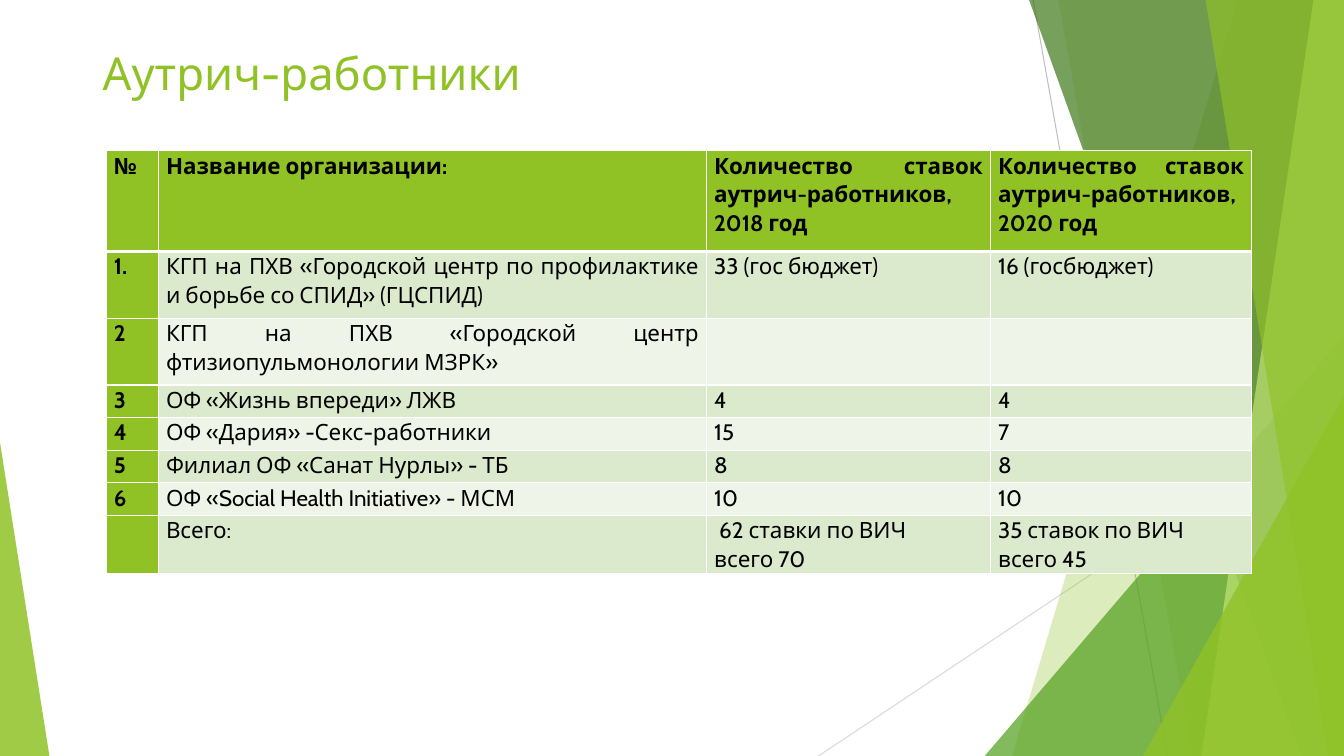
from lxml import etree
from pptx import Presentation
from pptx.dml.color import RGBColor
from pptx.enum.shapes import MSO_CONNECTOR as Connector, MSO_SHAPE as Shape
from pptx.enum.text import MSO_ANCHOR as Anchor, PP_ALIGN as Align
from pptx.oxml import parse_xml
from pptx.oxml.ns import nsdecls, qn
from pptx.util import Pt

COLOURS = {
    "white": "FFFFFF", "black": "000000", "grey": "BFBFBF", "pale grey": "D9D9D9",
    "green": "90C226", "mid green": "54A021", "dark green": "3F7819",
    "lime": "C0E474", "odd row": "DBE9CD", "even row": "EEF4E8",
}
WIDTH, HEIGHT = 960, 540


def paint(fill, colour, opacity=100):
    fill.solid()
    fill.fore_color.rgb = RGBColor.from_string(COLOURS[colour])
    if opacity < 100:
        tint = fill._xPr.find(qn("a:solidFill"))[0]
        etree.SubElement(tint, qn("a:alpha"), val=str(opacity * 1000))


def write(para, text, size, colour, bold=False):
    span = para.add_run()
    span.text = text
    formats = {"name": "Cabin", "size": Pt(size), "bold": bold}
    for key, value in formats.items():
        setattr(span.font, key, value)
    span.font.color.rgb = RGBColor.from_string(COLOURS[colour])


deck = Presentation()
deck.slide_width, deck.slide_height = Pt(WIDTH), Pt(HEIGHT)
page = deck.slides.add_slide(deck.slide_layouts[6])

rays = [
    (738, 0, 834, 540, "grey"),
    (960, 290, 584.6, 540, "pale grey"),
]
for *ends, colour in rays:
    ray = page.shapes.add_connector(Connector.STRAIGHT, *[Pt(end) for end in ends])
    ray.line.width = Pt(0.75)
    ray.line.color.rgb = RGBColor.from_string(COLOURS[colour])
    etree.SubElement(ray._element.spPr, qn("a:effectLst"))

facets = [
    ("band", (884.2, 722.9), "green", 30),
    ("band", (756, 851.8), "green", 20),
    ("triangle", (703.4, 239.8, 256.6, 300.2, 1), "mid green", 72),
    ("band", (735.1, 929.5), "dark green", 70),
    ("band", (938.2, 858.2), "lime", 70),
    ("band", (861.1, 949), "green", 65),
    ("triangle", (816.5, 283, 143.5, 257, 1), "green", 80),
    ("triangle", (0, 316.1, 35.3, 223.9, 0), "green", 85),
]
for kind, numbers, colour, opacity in facets:
    if kind == "band":
        top_x, bottom_x = numbers
        outline = page.shapes.build_freeform(Pt(top_x), 0)
        corners = [(WIDTH, 0), (WIDTH, HEIGHT), (bottom_x, HEIGHT)]
        outline.add_line_segments([(Pt(x), Pt(y)) for x, y in corners])
        facet = outline.convert_to_shape()
    else:
        *frame, apex = numbers
        facet = page.shapes.add_shape(Shape.ISOSCELES_TRIANGLE, *[Pt(n) for n in frame])
        facet.adjustments[0] = apex
    facet.shadow.inherit = False
    facet.line.fill.background()
    paint(facet.fill, colour, opacity)

title = page.shapes.add_textbox(Pt(66.2), Pt(28.8), Pt(828), Pt(44)).text_frame
title.word_wrap = True
title.vertical_anchor = Anchor.TOP
write(title.paragraphs[0], "Аутрич-работники", 32.4, "green")

rows = [
    ("№", "Название организации:", "Количество ставок аутрич-работников, 2018 год",
     "Количество ставок аутрич-работников, 2020 год"),
    ("1.", "КГП на ПХВ «Городской центр по профилактике и борьбе со СПИД» (ГЦСПИД)",
     "33 (гос бюджет)", "16 (госбюджет)"),
    ("2", "КГП на ПХВ «Городской центр фтизиопульмонологии МЗРК»", "", ""),
    ("3", "ОФ «Жизнь впереди» ЛЖВ", "4", "4"),
    ("4", "ОФ «Дария» -Секс-работники", "15", "7"),
    ("5", "Филиал ОФ «Санат Нурлы» - ТБ", "8", "8"),
    ("6", "ОФ «Social Health Initiative» - МСМ", "10", "10"),
    ("", "Всего:", " 62 ставки по ВИЧ\nвсего 70", "35 ставок по ВИЧ\nвсего 45"),
]
column_widths = [37.2, 391.6, 202.8, 186.6]
row_heights = [72, 47.7, 47.7] + [23.3] * 4 + [41.4]
table = page.shapes.add_table(
    len(rows), len(column_widths), Pt(76), Pt(107.6),
    Pt(sum(column_widths)), Pt(sum(row_heights))).table
for column, width in zip(table.columns, column_widths):
    column.width = Pt(width)
for row, height in zip(table.rows, row_heights):
    row.height = Pt(height)

margins = {"margin_left": Pt(5.4), "margin_right": Pt(5.4), "margin_top": 0, "margin_bottom": 0}
for r, texts in enumerate(rows):
    for c, text in enumerate(texts):
        cell = table.cell(r, c)
        for key, value in margins.items():
            setattr(cell, key, value)
        for side in "LRTB":
            under_header = (r, side) in [(0, "B"), (1, "T")]
            cell._tc.get_or_add_tcPr().append(parse_xml(
                f'<a:ln{side} {nsdecls("a")} w="{Pt(3 if under_header else 1)}"><a:solidFill>'
                f'<a:srgbClr val="{COLOURS["white"]}"/></a:solidFill></a:ln{side}>'))
        heading = r == 0 or c == 0
        paint(cell.fill, "green" if heading else "odd row" if r % 2 else "even row")
        for n, line in enumerate(text.split("\n")):
            para = cell.text_frame.add_paragraph() if n else cell.text_frame.paragraphs[0]
            para.alignment = Align.JUSTIFY
            para.line_spacing = 1.07
            if line:
                write(para, line, 16, "black", heading)
            else:
                para.font.size = Pt(16)

deck.save("out.pptx")
